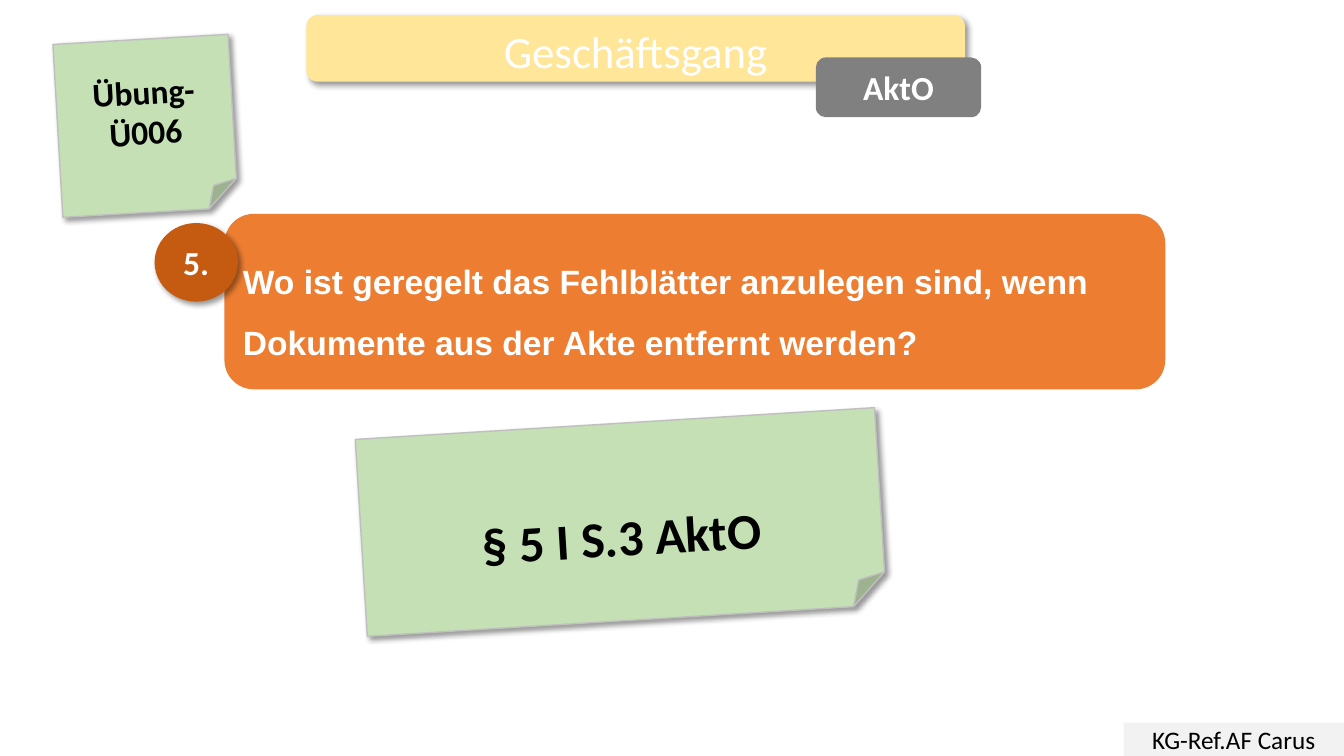
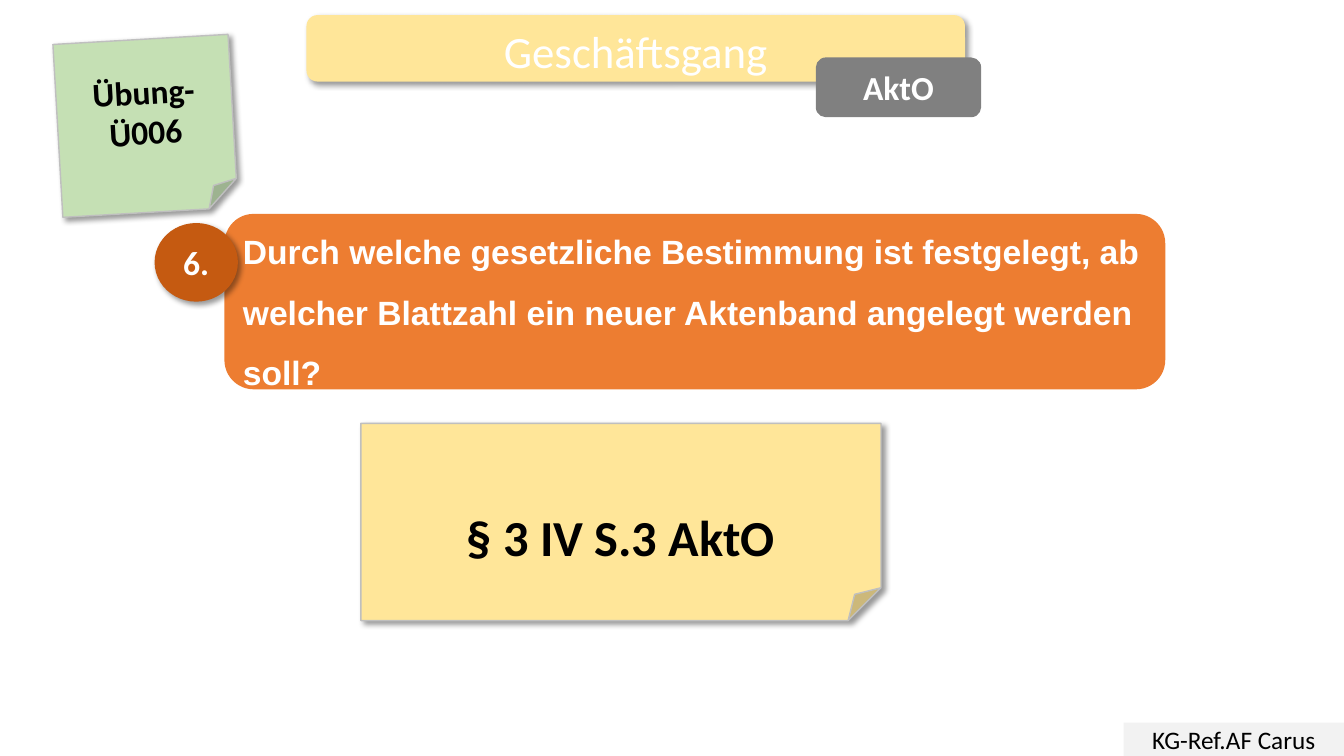
from dataclasses import dataclass

from lxml.etree import SubElement
from pptx import Presentation
from pptx.dml.color import RGBColor
from pptx.enum.shapes import MSO_SHAPE as Preset
from pptx.enum.text import MSO_ANCHOR as Anchor, MSO_AUTO_SIZE as Fit, PP_ALIGN as Align
from pptx.oxml.ns import qn
from pptx.util import Inches, Pt


@dataclass(frozen=True)
class Theme:
    white: str = "FFFFFF"
    black: str = "000000"
    yellow: str = "FFE699"
    green: str = "C5E0B4"
    orange: str = "ED7D31"
    rust: str = "C55A11"
    gray: str = "808080"
    pale: str = "F2F2F2"
    edge: str = "BFBFBF"
    heading_font: str = "Calibri"
    question_font: str = "Arial"
    footer_size: int = 18
    body_size: int = 24
    title_size: int = 32
    answer_size: int = 36


def apply(target, values):
    for name, value in values.items():
        setattr(target, name, value)


class Deck:
    def __init__(self, theme):
        self.theme = theme
        self.show = Presentation()
        apply(self.show, {"slide_width": Inches(13.33), "slide_height": Inches(7.5)})
        self.slide = None

    def place(self, left, top, width, height):
        across, down = self.show.slide_width / 100, self.show.slide_height / 100
        return {"left": round(left * across), "top": round(top * down),
                "width": round(width * across), "height": round(height * down)}

    def label(self, shape, text, color, size, font=None, bold=True,
              align=Align.CENTER, spacing=1.0, frame_format=None):
        frame = shape.text_frame
        frame.text = text
        apply(frame, {"word_wrap": True, "auto_size": Fit.NONE,
                      "vertical_anchor": Anchor.MIDDLE, **(frame_format or {})})
        for paragraph in frame.paragraphs:
            apply(paragraph, {"alignment": align, "line_spacing": spacing})
            for run in paragraph.runs:
                apply(run.font, {"name": font or self.theme.heading_font,
                                 "size": Pt(size), "bold": bold})
                run.font.color.rgb = RGBColor.from_string(color)

    def panel(self, preset, area, fill, shadow=False):
        shape = self.slide.shapes.add_shape(preset, **self.place(*area))
        shape.shadow.inherit = False
        shape.fill.solid()
        shape.fill.fore_color.rgb = RGBColor.from_string(fill)
        shape.line.fill.background()
        if shadow:
            self.cast_shadow(shape)
        return shape

    def cast_shadow(self, shape):
        effects = shape._element.spPr.find(qn("a:effectLst"))
        outer = SubElement(effects, qn("a:outerShdw"), blurRad=str(Pt(4)),
                           dist=str(Pt(3)), dir="2700000", algn="tl", rotWithShape="0")
        tint = SubElement(outer, qn("a:srgbClr"), val=self.theme.black)
        SubElement(tint, qn("a:alpha"), val="40000")

    def note(self, area, text, fill, size, rotation=0, **text_format):
        note = self.panel(Preset.FOLDED_CORNER, area, fill, shadow=True)
        note.rotation = rotation
        note.line.color.rgb = RGBColor.from_string(self.theme.edge)
        note.line.width = Pt(1)
        self.label(note, text, self.theme.black, size, **text_format)

    def title(self, text):
        area = (22.8, 2, 49, 8.8)
        self.panel(Preset.ROUNDED_RECTANGLE, area, self.theme.yellow, shadow=True)
        title = self.slide.shapes.title
        apply(title, self.place(*area))
        self.label(title, text, self.theme.white, self.theme.title_size, bold=False,
                   frame_format={"margin_top": Inches(0.05), "margin_bottom": 0})
        self.slide.shapes._spTree.append(title._element)

    def footer(self, text):
        footer = self.panel(Preset.RECTANGLE, (83.6, 95.6, 16.4, 4.4), self.theme.pale)
        self.label(footer, text, self.theme.black, self.theme.footer_size, bold=False)

    def question(self, text):
        question = self.panel(Preset.ROUNDED_RECTANGLE, (16.7, 28.3, 70, 23.2),
                              self.theme.orange)
        self.label(question, text, self.theme.white, self.theme.body_size,
                   self.theme.question_font, align=Align.LEFT, spacing=1.5)

    def answer(self, text, fill, rotation):
        self.note((26.85, 56, 38.7, 26.1), text, fill, self.theme.answer_size, rotation,
                  frame_format={"margin_top": Inches(0.66)})

    def number(self, text):
        badge = self.panel(Preset.FLOWCHART_CONNECTOR, (11.5, 29.5, 6.2, 10.4),
                           self.theme.rust, shadow=True)
        self.label(badge, text, self.theme.white, self.theme.body_size,
                   frame_format={"margin_left": 0, "margin_right": 0})

    def tag(self, text):
        tag = self.panel(Preset.ROUNDED_RECTANGLE, (60.7, 7.6, 12.3, 7.9), self.theme.gray)
        self.label(tag, text, self.theme.white, self.theme.body_size)

    def exercise(self, number, question, answer, fill, rotation):
        self.slide = self.show.slides.add_slide(self.show.slide_layouts[5])
        self.footer("KG-Ref.AF Carus")
        self.title("Geschäftsgang")
        self.note((4.3, 5.2, 13.05, 22.9), "Übung-\nÜ006", self.theme.green,
                  self.theme.body_size, -3.3)
        self.question(question)
        self.answer(answer, fill, rotation)
        self.number(number)
        self.tag("AktO")


def main():
    theme = Theme()
    deck = Deck(theme)
    exercises = [
        ("5.", "Wo ist geregelt das Fehlblätter anzulegen sind, wenn Dokumente "
               "aus der Akte entfernt werden?", "§ 5 I S.3 AktO", theme.green, -3.5),
        ("6.", "Durch welche gesetzliche Bestimmung ist festgelegt, ab welcher "
               "Blattzahl ein neuer Aktenband angelegt werden soll?",
         "§ 3 IV S.3 AktO", theme.yellow, 0),
    ]
    for exercise in exercises:
        deck.exercise(*exercise)
    deck.show.save("out.pptx")


if __name__ == "__main__":
    main()
